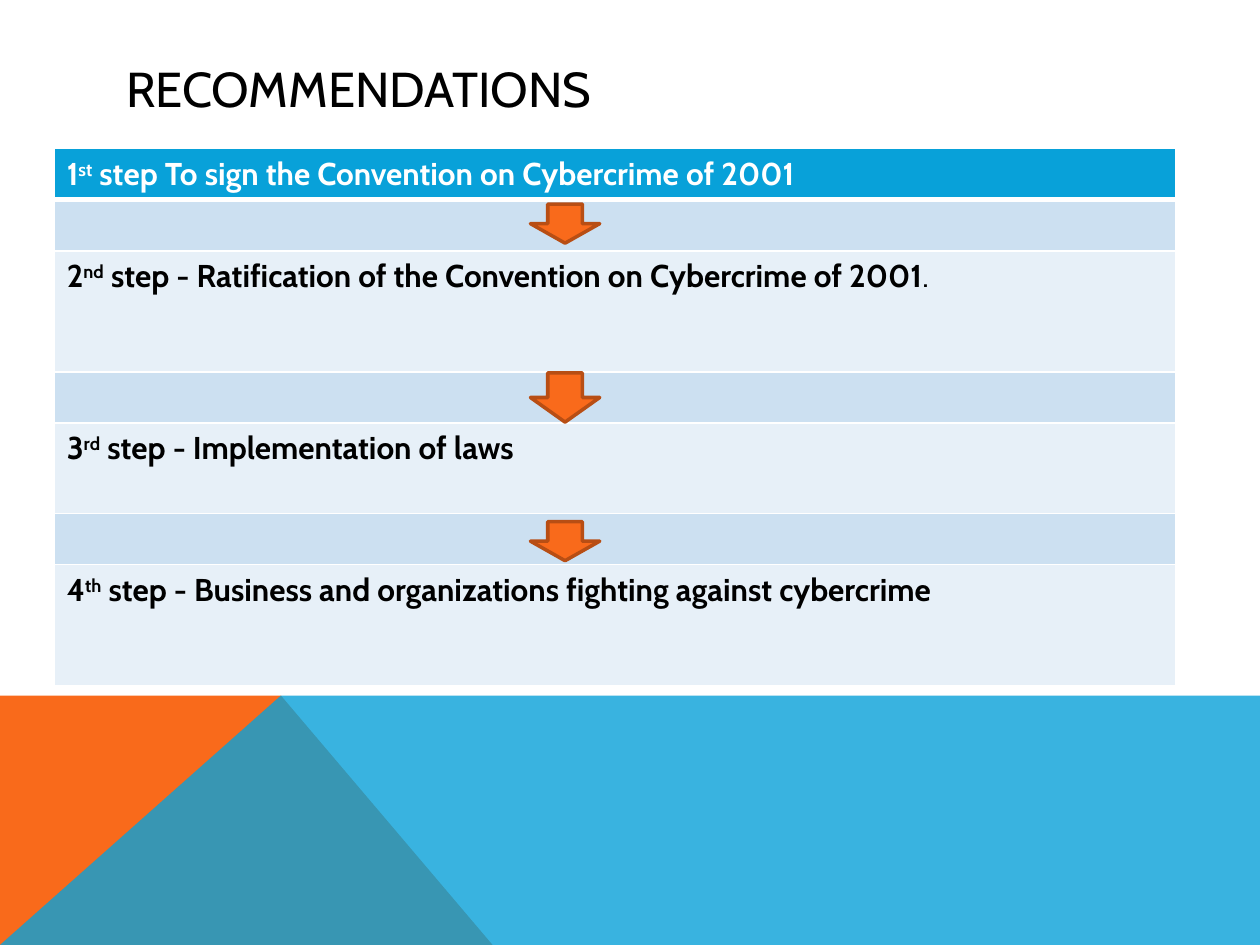
from dataclasses import dataclass

from lxml.etree import SubElement
from pptx import Presentation
from pptx.dml.color import RGBColor
from pptx.enum.shapes import MSO_SHAPE as Preset
from pptx.enum.text import MSO_ANCHOR as Anchor, PP_ALIGN as Align
from pptx.oxml.ns import qn
from pptx.util import Inches, Pt


@dataclass(frozen=True)
class Theme:
    font: str = "Cabin"
    title_size: int = 28
    body_size: int = 18
    black: str = "000000"
    white: str = "FFFFFF"
    blue: str = "08A1D9"
    orange: str = "F96A1B"
    arrow_edge: str = "B84E14"
    gap_band: str = "CCE0F1"
    step_band: str = "E7F0F8"


@dataclass(frozen=True)
class Step:
    number: str
    suffix: str
    text: str
    height: float
    ending: str = ""


@dataclass(frozen=True)
class Arrow:
    top: float
    height: float


THEME = Theme()
GAP_HEIGHT = 0.4
STEPS = [
    Step("1", "st", " step To sign the Convention on Cybercrime of 2001", 0.4),
    Step("2", "nd", " step - Ratification of the Convention on Cybercrime of 2001", 0.96, "."),
    Step("3", "rd", " step - Implementation of laws", 0.72),
    Step("4", "th", " step - Business and organizations fighting against cybercrime", 0.96),
]
ARROWS = [Arrow(1.62, 0.31), Arrow(2.96, 0.39), Arrow(4.14, 0.31)]


def add_span(para, text: str, *, size: int = THEME.body_size, color: str = THEME.black,
             bold: bool = False, raised: bool = False) -> None:
    span = para.add_run()
    span.text = text
    span.font.name = THEME.font
    span.font.size = Pt(size)
    span.font.bold = bold
    span.font.color.rgb = RGBColor.from_string(color)
    if raised:
        span.font._element.set("baseline", "30000")


def add_area(page, points: list[tuple[float, float]], color: str, opacity: int = 100) -> None:
    corners = [(Inches(x), Inches(y)) for x, y in points]
    builder = page.shapes.build_freeform(*corners[0])
    builder.add_line_segments(corners[1:], close=True)
    area = builder.convert_to_shape()
    area.shadow.inherit = False
    area.fill.solid()
    area.fill.fore_color.rgb = RGBColor.from_string(color)
    area.line.fill.background()
    if opacity < 100:
        tint = area._element.spPr.find(f"{qn('a:solidFill')}/{qn('a:srgbClr')}")
        SubElement(tint, qn("a:alpha"), val=str(opacity * 1000))


def add_title(page, text: str) -> None:
    title = page.shapes.title
    title.left, title.top, title.width, title.height = map(Inches, (0.9, 0.4, 8.22, 0.6))
    title.text_frame.vertical_anchor = Anchor.MIDDLE
    para = title.text_frame.paragraphs[0]
    para.alignment = Align.LEFT
    add_span(para, text, size=THEME.title_size)


def style_cell(cell, fill: str, top: int = 1, bottom: int = 1) -> None:
    properties = cell._tc.get_or_add_tcPr()
    for side, width in (("L", 1), ("R", 1), ("T", top), ("B", bottom)):
        border = SubElement(properties, qn(f"a:ln{side}"), w=str(Pt(width)))
        solid = SubElement(border, qn("a:solidFill"))
        SubElement(solid, qn("a:srgbClr"), val=THEME.white)
    cell.fill.solid()
    cell.fill.fore_color.rgb = RGBColor.from_string(fill)


def write_step(cell, step: Step, color: str) -> None:
    para = cell.text_frame.paragraphs[0]
    add_span(para, step.number, color=color, bold=True)
    add_span(para, step.suffix, color=color, bold=True, raised=True)
    add_span(para, step.text, color=color, bold=True)
    if step.ending:
        add_span(para, step.ending, color=color)


def add_steps(page, steps: list[Step]) -> None:
    row_count = 2 * len(steps) - 1
    total = sum(step.height for step in steps) + GAP_HEIGHT * (len(steps) - 1)
    table = page.shapes.add_table(row_count, 1, Inches(0.43), Inches(1.18),
                                  Inches(8.9), Inches(total)).table
    for index in range(row_count):
        cell = table.cell(index, 0)
        position, is_gap = divmod(index, 2)
        if is_gap:
            table.rows[index].height = Inches(GAP_HEIGHT)
            style_cell(cell, THEME.gap_band, top=3 if index == 1 else 1)
            continue
        step, is_header = steps[position], index == 0
        table.rows[index].height = Inches(step.height)
        style_cell(cell, THEME.blue if is_header else THEME.step_band,
                   bottom=3 if is_header else 1)
        write_step(cell, step, THEME.white if is_header else THEME.black)


def add_arrow(page, arrow: Arrow) -> None:
    shape = page.shapes.add_shape(Preset.DOWN_ARROW, Inches(4.21), Inches(arrow.top),
                                  Inches(0.55), Inches(arrow.height))
    shape.shadow.inherit = False
    shape.fill.solid()
    shape.fill.fore_color.rgb = RGBColor.from_string(THEME.orange)
    shape.line.color.rgb = RGBColor.from_string(THEME.arrow_edge)
    shape.line.width = Pt(2)


def main() -> None:
    deck = Presentation()
    deck.slide_width, deck.slide_height = Inches(10), Inches(7.5)
    page = deck.slides.add_slide(deck.slide_layouts[5])
    add_area(page, [(0, 7.5), (0, 5.52), (2.23, 5.52), (3.91, 7.5)], THEME.orange)
    add_area(page, [(0, 7.5), (2.23, 5.52), (10, 5.52), (10, 7.5)], THEME.blue, opacity=80)
    add_title(page, "RECOMMENDATIONS")
    add_steps(page, STEPS)
    for arrow in ARROWS:
        add_arrow(page, arrow)
    deck.save("out.pptx")


if __name__ == "__main__":
    main()
